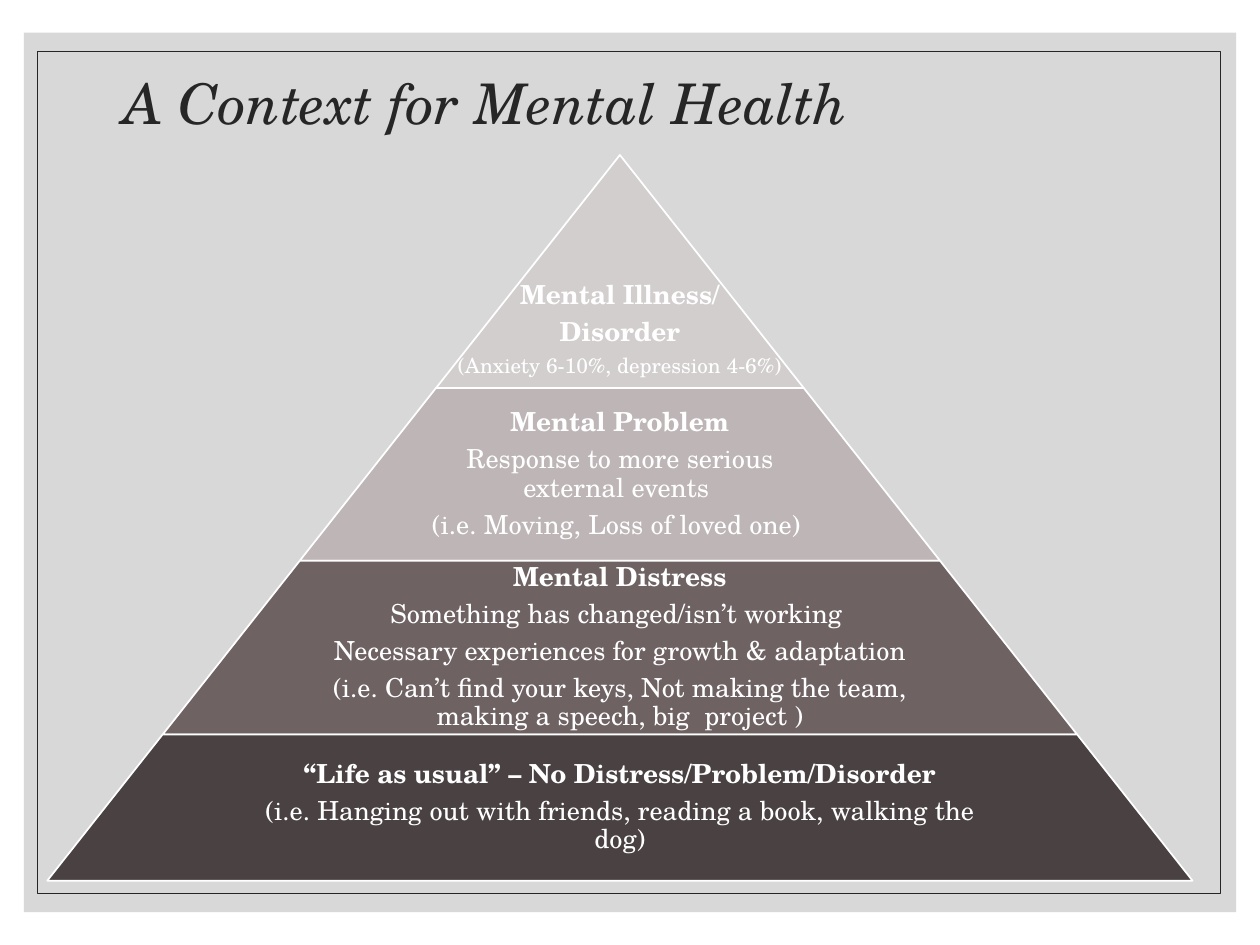
from lxml import etree
from pptx import Presentation
from pptx import util as u
from pptx.dml.color import RGBColor
from pptx.enum import shapes, text
from pptx.oxml.ns import qn

FONT = "TeX Gyre Schola"
WHITE = RGBColor(0xFF, 0xFF, 0xFF)
INK = RGBColor(0x26, 0x26, 0x26)
PANEL = RGBColor(0xBF, 0xBF, 0xBF)
TIER_1 = RGBColor(0xD3, 0xCE, 0xCE)
TIER_2 = RGBColor(0xBD, 0xB5, 0xB6)
TIER_3 = RGBColor(0x6E, 0x62, 0x63)
TIER_4 = RGBColor(0x49, 0x41, 0x42)

APEX_X, APEX_Y, SLOPE = 4.92, 1.23, 0.789
TEXT_SHARE = 0.65

TIERS = [
    (3.08, TIER_1, [
        ("Mental Illness/", 15, True),
        ("Disorder", 15, True),
        ("(Anxiety 6-10%, depression 4-6%)", 12, False)]),
    (4.45, TIER_2, [
        ("Mental Problem", 15, True),
        ("Response to more serious external events ", 15, False),
        ("(i.e. Moving, Loss of loved one) ", 15, False)]),
    (5.83, TIER_3, [
        ("Mental Distress", 15, True),
        ("Something has changed/isn’t working ", 15, False),
        ("Necessary experiences for growth & adaptation", 15, False),
        ("(i.e. Can’t find your keys, Not making the team, "
         "making a speech, big  project )", 15, False)]),
    (6.99, TIER_4, [
        ("“Life as usual” – No Distress/Problem/Disorder", 15, True),
        ("(i.e. Hanging out with friends, reading a book, walking the dog)",
         15, False)]),
]


class Deck:
    def __init__(self, prs):
        self.s = prs.slides.add_slide(prs.slide_layouts[5])

    def shape(self, kind, box, fill=None, line=None, width=1, alpha=None):
        sp = self.s.shapes.add_shape(kind, *map(u.Inches, box))
        sp.shadow.inherit = False
        if fill is None:
            sp.fill.background()
        else:
            sp.fill.solid()
            sp.fill.fore_color.rgb = fill
        if alpha is not None:
            clr = sp._element.spPr.find(qn("a:solidFill"))[0]
            etree.SubElement(clr, qn("a:alpha"), val=str(alpha * 1000))
        if line is None:
            sp.line.fill.background()
        else:
            sp.line.color.rgb = line
            sp.line.width = u.Pt(width)
        return sp

    def run(self, p, words, size, color, bold=False, italic=False):
        r = p.add_run()
        r.text = words
        r.font.name = FONT
        r.font.size = u.Pt(size)
        r.font.bold = bold
        r.font.italic = italic
        r.font.color.rgb = color
        p.line_spacing = 0.9

    def title(self, words, box):
        sp = self.s.shapes.title
        self.s.shapes._spTree.append(sp._element)
        sp.left, sp.top, sp.width, sp.height = map(u.Inches, box)
        tf = sp.text_frame
        tf.auto_size = text.MSO_AUTO_SIZE.NONE
        tf.vertical_anchor = text.MSO_ANCHOR.MIDDLE
        p = tf.paragraphs[0]
        p.alignment = text.PP_ALIGN.LEFT
        self.run(p, words, 32, INK, italic=True)

    def label(self, lines, box):
        tf = self.s.shapes.add_textbox(*map(u.Inches, box)).text_frame
        tf.word_wrap = True
        tf.vertical_anchor = text.MSO_ANCHOR.MIDDLE
        tf.margin_left = tf.margin_right = u.Inches(0.02)
        tf.margin_top = tf.margin_bottom = u.Inches(0.02)
        for i, (words, size, bold) in enumerate(lines):
            p = tf.add_paragraph() if i else tf.paragraphs[0]
            p.alignment = text.PP_ALIGN.CENTER
            p.space_after = u.Pt(5)
            self.run(p, words, size, WHITE, bold)

    def tier(self, top, bottom, color, lines):
        width, height = 2 * SLOPE * (bottom - APEX_Y), bottom - top
        sp = self.shape(shapes.MSO_SHAPE.TRAPEZOID,
                        (APEX_X - width / 2, top, width, height), color, WHITE)
        sp.adjustments[0] = SLOPE
        if top == APEX_Y:
            top += height / 2
        else:
            width *= TEXT_SHARE
        self.label(lines, (APEX_X - width / 2, top, width, bottom - top))


def main():
    prs = Presentation()
    prs.slide_width, prs.slide_height = u.Inches(10), u.Inches(7.5)
    deck = Deck(prs)
    rect = shapes.MSO_SHAPE.RECTANGLE
    deck.shape(rect, (0.19, 0.26, 9.62, 6.98), PANEL, alpha=60)
    deck.shape(rect, (0.3, 0.41, 9.39, 6.68), line=INK, width=0.5)
    deck.title("A Context for Mental Health", (0.88, 0.46, 8.25, 0.77))
    top = APEX_Y
    for bottom, color, lines in TIERS:
        deck.tier(top, bottom, color, lines)
        top = bottom
    prs.save("out.pptx")


if __name__ == "__main__":
    main()
